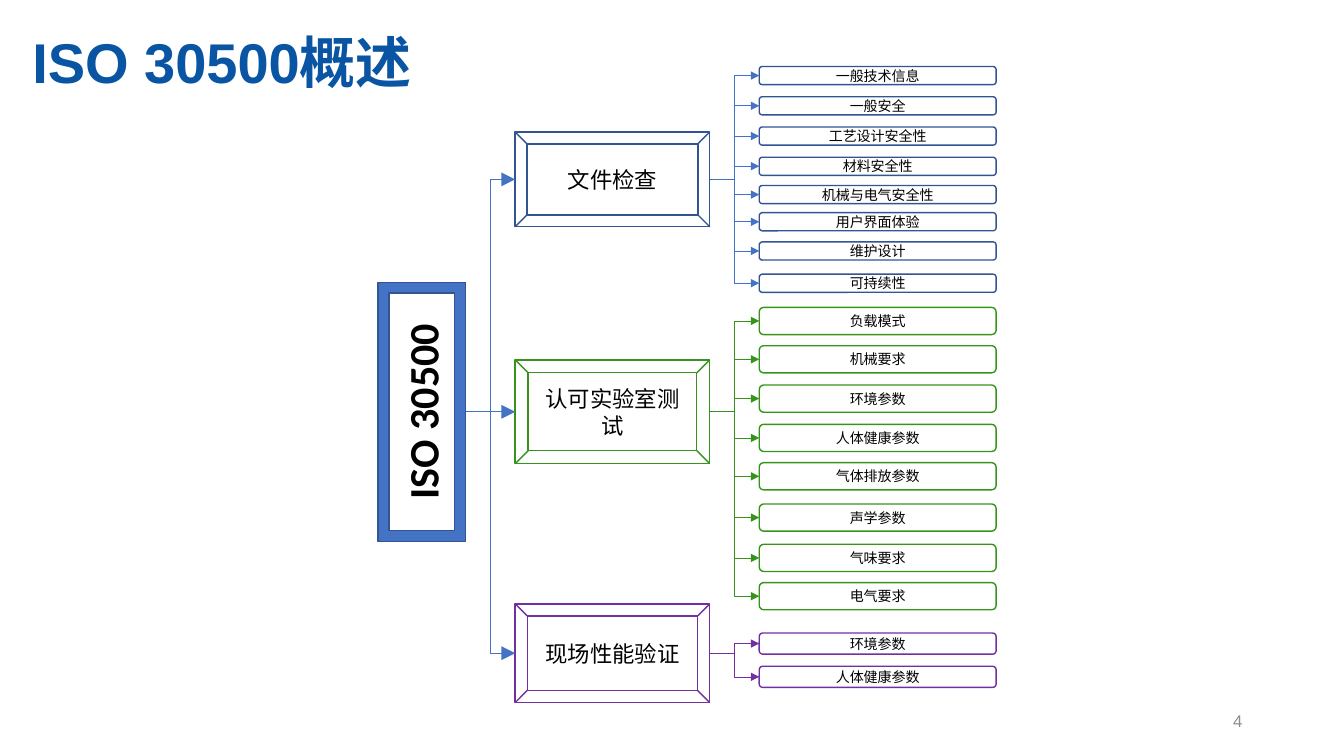
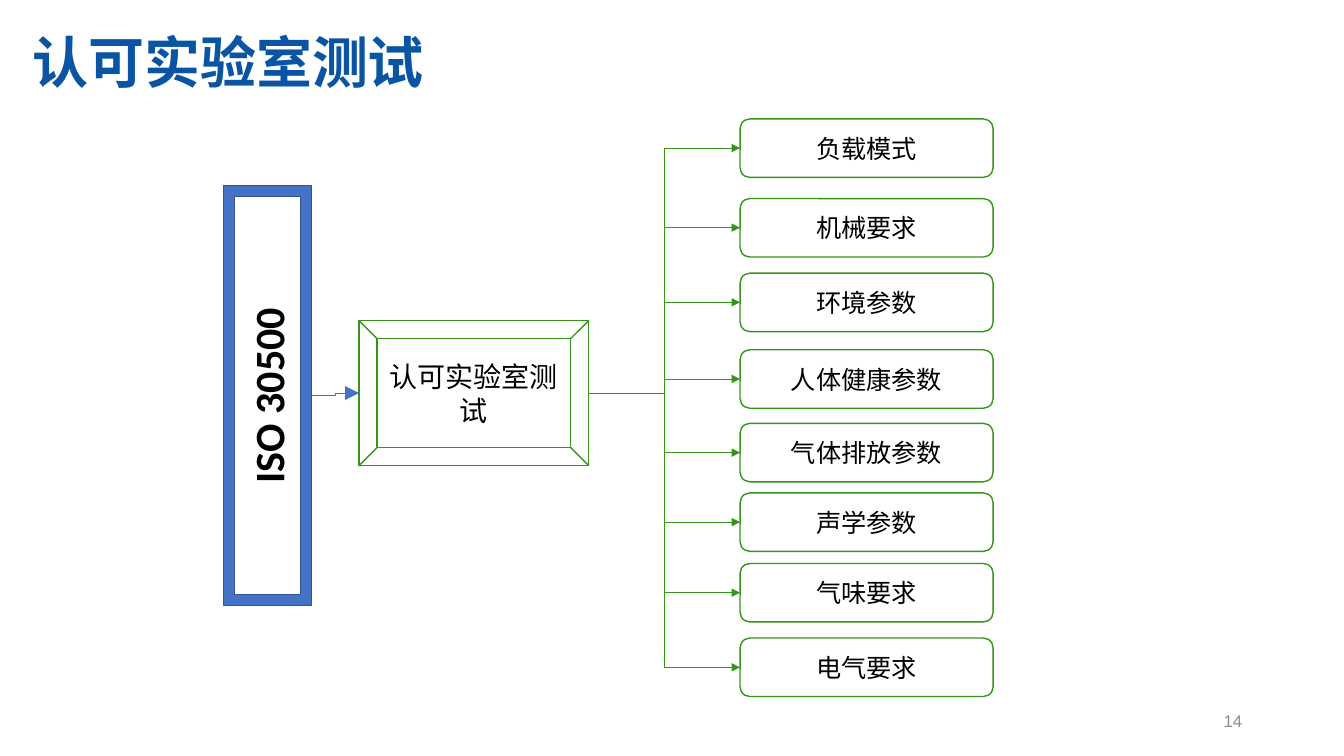
"""Build two slides that show the ISO 30500 requirements as trees."""
from dataclasses import dataclass

from lxml import etree
from pptx import Presentation
from pptx.dml.color import RGBColor
from pptx.enum.shapes import MSO_CONNECTOR, MSO_SHAPE
from pptx.enum.text import MSO_ANCHOR, PP_ALIGN
from pptx.oxml.ns import qn
from pptx.util import Inches, Pt

FRAME, BEVEL, ROUNDED = MSO_SHAPE.FRAME, MSO_SHAPE.BEVEL, MSO_SHAPE.ROUNDED_RECTANGLE
ELBOW = MSO_CONNECTOR.ELBOW
MIDDLE = MSO_ANCHOR.MIDDLE
LEFT, CENTER, RIGHT = PP_ALIGN.LEFT, PP_ALIGN.CENTER, PP_ALIGN.RIGHT
LEFT_SIDE, RIGHT_SIDE = 1, 3
BEVEL_SITES = {LEFT_SIDE: "4", RIGHT_SIDE: "0"}


@dataclass(frozen=True)
class Theme:
    title: str = "0A55A3"
    text: str = "000000"
    number: str = "8C8C8C"
    blue: str = "4472C4"
    navy: str = "325491"
    green: str = "36941C"
    purple: str = "7030A0"
    heading_font: str = "Arial"
    body_font: str = "Calibri"
    title_size: int = 40
    root_size: int = 30
    number_size: int = 12
    outline: float = 1
    connector: float = 0.5


THEME = Theme()


def write(shape, text, size, color=THEME.text, font=THEME.body_font, bold=False,
          align=CENTER, spacing=None, margin=None):
    frame = shape.text_frame
    frame.word_wrap = True
    frame.vertical_anchor = MIDDLE
    if margin is not None:
        frame.margin_left = frame.margin_right = margin
        frame.margin_top = frame.margin_bottom = margin
    paragraph = frame.paragraphs[0]
    paragraph.alignment = align
    paragraph.line_spacing = spacing
    run = paragraph.add_run()
    run.text = text
    run.font.size = Pt(size)
    run.font.name = font
    run.font.bold = bold
    run.font.color.rgb = RGBColor.from_string(color)


def join(slide, source, target, color, arrow_size):
    connector = slide.shapes.add_connector(ELBOW, 0, 0, 0, 0)
    connector.begin_connect(source, RIGHT_SIDE)
    connector.end_connect(target, LEFT_SIDE)
    for tag, shape, side in (("stCxn", source, RIGHT_SIDE), ("endCxn", target, LEFT_SIDE)):
        if shape.auto_shape_type == BEVEL:
            connector.element.xpath(f".//a:{tag}")[0].set("idx", BEVEL_SITES[side])
    connector.line.width = Pt(THEME.connector)
    connector.line.color.rgb = RGBColor.from_string(color)
    outline = connector.line._get_or_add_ln()
    etree.SubElement(outline, qn("a:tailEnd"), type="triangle", w=arrow_size, len=arrow_size)
    etree.SubElement(connector.element.spPr, qn("a:effectLst"))


LAB_TESTS = ["负载模式", "机械要求", "环境参数", "人体健康参数",
             "气体排放参数", "声学参数", "气味要求", "电气要求"]
DOCUMENT_CHECKS = ["一般技术信息", "一般安全", "工艺设计安全性", "材料安全性",
                   "机械与电气安全性", "用户界面体验", "维护设计", "可持续性"]
FIELD_CHECKS = ["环境参数", "人体健康参数"]

SLIDES = [
    {
        "title": "ISO 30500概述", "number": "4",
        "root": (3.75, 2.8, 0.87, 2.57),
        "branch_size": 16, "leaf_size": 10, "leaf_left": 7.53, "leaf_width": 2.35,
        "branches": [
            ("文件检查", (5.11, 1.31, 1.93, 0.94), THEME.navy, THEME.blue, 0.18,
             DOCUMENT_CHECKS, [0.66, 0.96, 1.26, 1.56, 1.84, 2.11, 2.4, 2.72]),
            ("认可实验室测试", (5.11, 3.57, 1.93, 1.03), THEME.green, THEME.green, 0.27,
             LAB_TESTS, [3.05, 3.43, 3.82, 4.21, 4.59, 5, 5.4, 5.78]),
            ("现场性能验证", (5.11, 5.99, 1.93, 0.98), THEME.purple, THEME.purple, 0.21,
             FIELD_CHECKS, [6.28, 6.61]),
        ],
    },
    {
        "title": "认可实验室测试", "number": "14",
        "root": (2.22, 1.84, 0.87, 4.17),
        "branch_size": 20, "leaf_size": 18, "leaf_left": 7.34, "leaf_width": 2.51,
        "branches": [
            ("认可实验室测试", (3.56, 3.18, 2.28, 1.44), THEME.green, THEME.green, 0.58,
             LAB_TESTS, [1.18, 1.97, 2.71, 3.47, 4.2, 4.89, 5.59, 6.33]),
        ],
    },
]

presentation = Presentation()
presentation.slide_width = Inches(13.33)
presentation.slide_height = Inches(7.5)
title_only = presentation.slide_layouts[5]

for content in SLIDES:
    slide = presentation.slides.add_slide(title_only)
    title = slide.shapes.title
    title.left, title.top, title.width, title.height = map(Inches, (0.32, 0.15, 12.24, 0.99))
    write(title, content["title"], THEME.title_size, color=THEME.title,
          font=THEME.heading_font, bold=True, align=LEFT, spacing=0.9, margin=0)

    boxes = [(FRAME, content["root"], "ISO 30500", THEME.root_size, THEME.navy, None, None)]
    for name, place, outline, line, height, leaves, tops in content["branches"]:
        branch = len(boxes)
        boxes.append((BEVEL, place, name, content["branch_size"], outline, 0, THEME.blue))
        for leaf, top in zip(leaves, tops):
            leaf_place = (content["leaf_left"], top, content["leaf_width"], height)
            boxes.append((ROUNDED, leaf_place, leaf, content["leaf_size"], outline, branch, line))

    shapes = []
    for kind, place, text, size, outline, parent, line in boxes:
        shape = slide.shapes.add_shape(kind, *map(Inches, place))
        shape.shadow.inherit = False
        shape.line.width = Pt(THEME.outline)
        shape.line.color.rgb = RGBColor.from_string(outline)
        write(shape, text, size, bold=kind == FRAME)
        if kind == FRAME:
            shape.fill.solid()
            shape.fill.fore_color.rgb = RGBColor.from_string(THEME.blue)
            shape.element.xpath(".//a:bodyPr")[0].set("vert", "vert270")
        else:
            shape.fill.background()
        shapes.append(shape)
        if parent is not None:
            join(slide, shapes[parent], shape, line, "lg" if kind == BEVEL else "med")

    number = slide.shapes.add_textbox(*map(Inches, (9.42, 6.95, 3, 0.4)))
    write(number, content["number"], THEME.number_size, color=THEME.number,
          font=THEME.heading_font, align=RIGHT)

presentation.save("out.pptx")
